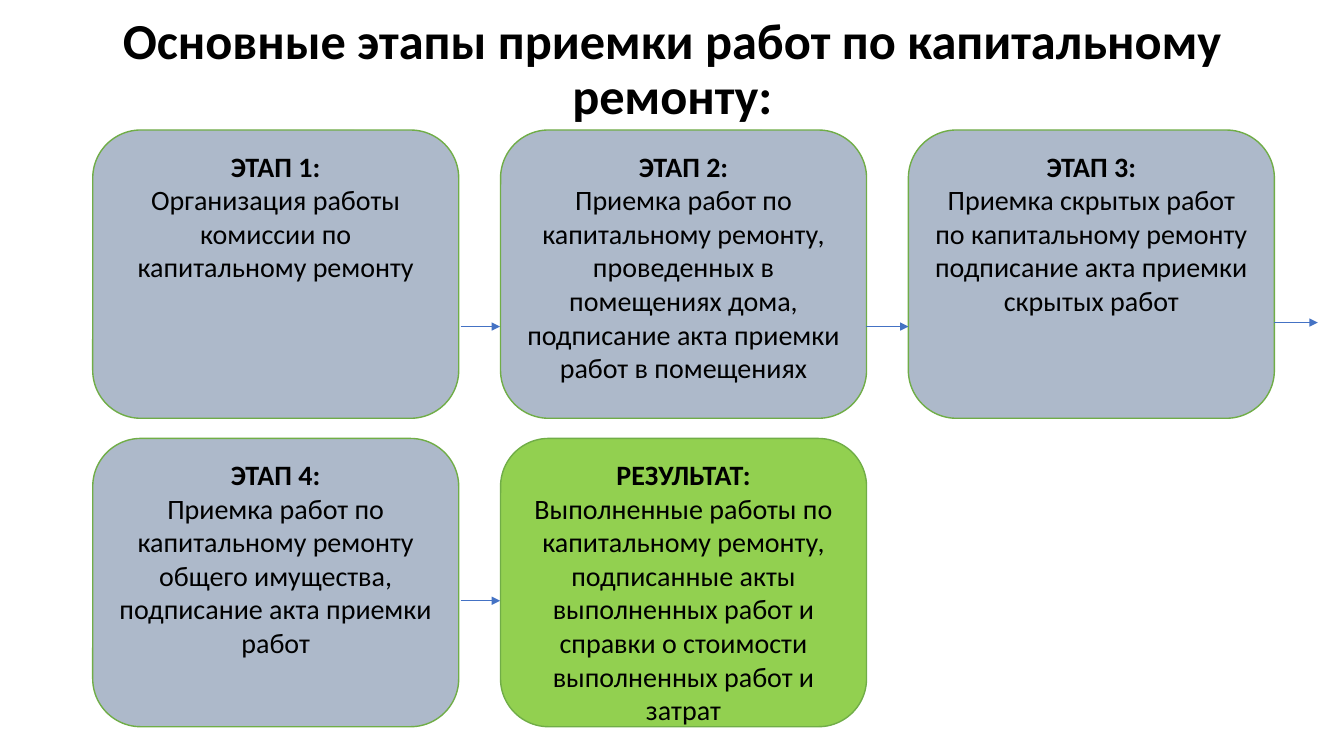
import pptx
import pptx.util
import pptx.dml.color
import pptx.enum.shapes
import pptx.enum.text
import pptx.oxml
import pptx.oxml.ns

Inches = pptx.util.Inches
COLORS = {"text": "000000", "stage": "ADB9CA", "result": "92D050", "border": "70AD47", "arrow": "4472C4"}
LEFT, TOP = 0.92, 1.29
BOX_WIDTH, BOX_HEIGHT = 3.63, 2.86
COLUMN_STEP, ROW_STEP = 4.045, 3.06


def rgb(name):
    return pptx.dml.color.RGBColor.from_string(COLORS[name])


def add_line_of_text(paragraph, text, size, bold):
    paragraph.alignment = pptx.enum.text.PP_ALIGN.CENTER
    run = paragraph.add_run()
    run.text = text
    run.font.name = "Calibri"
    run.font.size = pptx.util.Pt(size)
    run.font.bold = bold
    run.font.color.rgb = rgb("text")


presentation = pptx.Presentation()
presentation.slide_width = Inches(13.33)
presentation.slide_height = Inches(7.5)
slide = presentation.slides.add_slide(presentation.slide_layouts[6])

heading = slide.shapes.add_textbox(Inches(LEFT), Inches(0.11), Inches(11.5), Inches(1.18)).text_frame
heading.word_wrap = True
heading.vertical_anchor = pptx.enum.text.MSO_ANCHOR.MIDDLE
heading.paragraphs[0].line_spacing = 0.9
add_line_of_text(heading.paragraphs[0], "Основные этапы приемки работ по капитальному ремонту:", 36, True)

stages = [
    (0, 0, "stage", "ЭТАП 1:", "Организация работы комиссии по капитальному ремонту"),
    (1, 0, "stage", "ЭТАП 2:", "Приемка работ по капитальному ремонту, проведенных в помещениях дома, "
     "подписание акта приемки работ в помещениях"),
    (2, 0, "stage", "ЭТАП 3:", "Приемка скрытых работ по капитальному ремонту подписание акта приемки скрытых работ"),
    (0, 1, "stage", "ЭТАП 4:", "Приемка работ по капитальному ремонту общего имущества, подписание акта приемки работ"),
    (1, 1, "result", "РЕЗУЛЬТАТ:", "Выполненные работы по капитальному ремонту, подписанные акты выполненных работ "
     "и справки о стоимости выполненных работ и затрат"),
]
for column, row, fill, label, description in stages:
    stage = slide.shapes.add_shape(
        pptx.enum.shapes.MSO_SHAPE.ROUNDED_RECTANGLE,
        Inches(LEFT + column * COLUMN_STEP), Inches(TOP + row * ROW_STEP),
        Inches(BOX_WIDTH), Inches(BOX_HEIGHT))
    stage.shadow.inherit = False
    stage.fill.solid()
    stage.fill.fore_color.rgb = rgb(fill)
    stage.line.color.rgb = rgb("border")
    stage.line.width = pptx.util.Pt(1)
    stage.text_frame.word_wrap = True
    stage.text_frame.vertical_anchor = pptx.enum.text.MSO_ANCHOR.TOP
    add_line_of_text(stage.text_frame.paragraphs[0], label, 20, True)
    add_line_of_text(stage.text_frame.add_paragraph(), description, 20, False)

for start, end, height in [(4.57, 4.96, 3.24), (8.59, 9.01, 3.24), (12.64, 13.07, 3.2), (4.57, 4.96, 5.96)]:
    arrow = slide.shapes.add_connector(
        pptx.enum.shapes.MSO_CONNECTOR.STRAIGHT,
        Inches(start), Inches(height), Inches(end), Inches(height))
    arrow.line.color.rgb = rgb("arrow")
    arrow.line.width = pptx.util.Pt(0.5)
    head = pptx.oxml.parse_xml(f'<a:tailEnd {pptx.oxml.ns.nsdecls("a")} type="triangle"/>')
    arrow.line._get_or_add_ln().append(head)
    arrow._element.spPr.append(pptx.oxml.parse_xml(f'<a:effectLst {pptx.oxml.ns.nsdecls("a")}/>'))

presentation.save("out.pptx")
